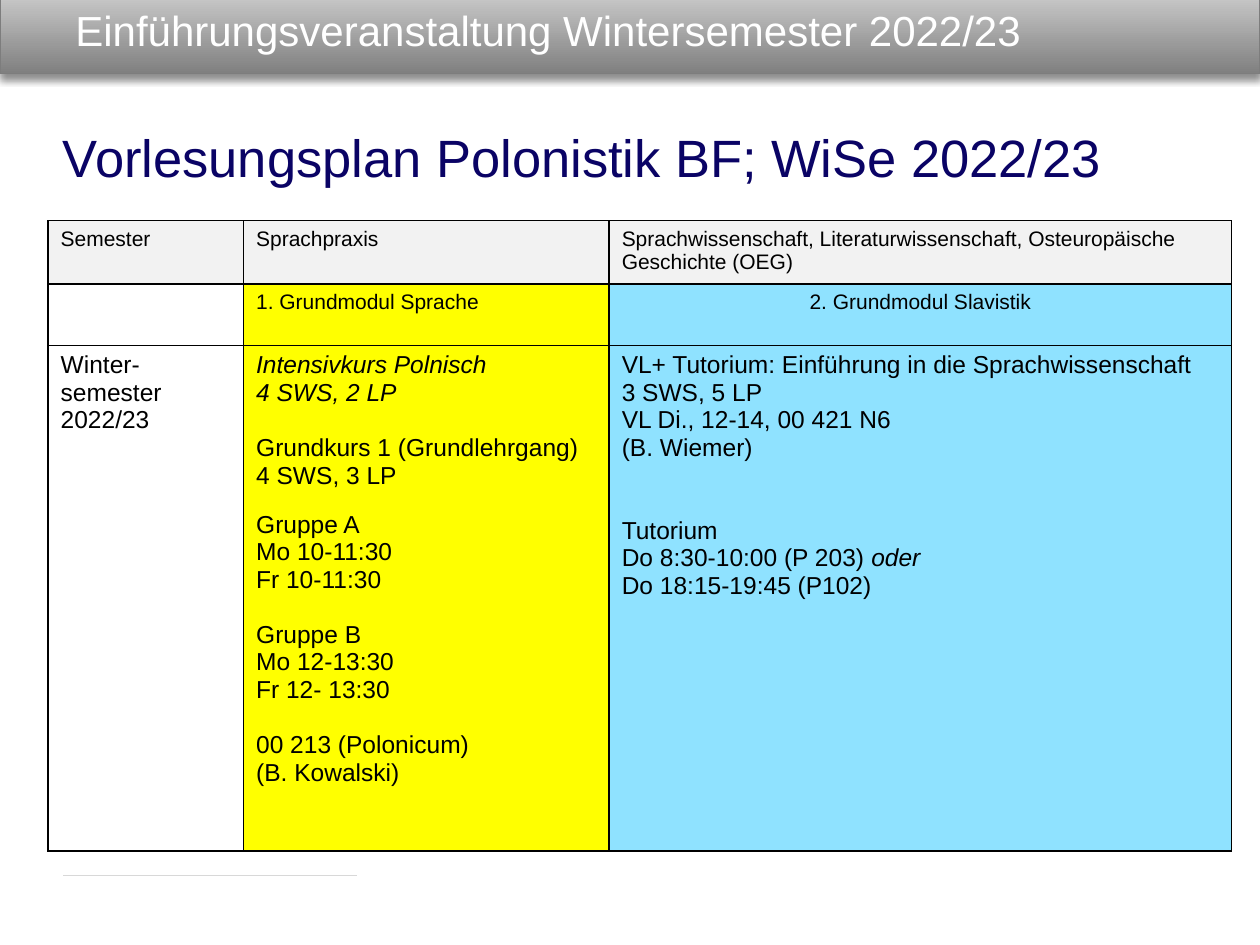
from pptx import Presentation
from pptx.dml.color import RGBColor
from pptx.enum.shapes import MSO_CONNECTOR, MSO_SHAPE
from pptx.enum.text import MSO_ANCHOR, PP_ALIGN
from pptx.oxml import parse_xml
from pptx.oxml.ns import nsdecls
from pptx.util import Cm, Pt

COLORS = {
    "black": "000000",
    "white": "FFFFFF",
    "navy": "0A0365",
    "header": "F2F2F2",
    "yellow": "FFFF00",
    "blue": "8FE2FF",
    "band_dark": "808080",
    "band_light": "CDCDCD",
    "band_line": "7D7D7D",
    "rule": "D8D8D8",
}
FULL_GAP = 15.75
SMALL_GAP = 12.4


class SlideBuilder:
    font = "Arial"

    def __init__(self, slide):
        self.slide = slide

    def color(self, name):
        return RGBColor.from_string(COLORS[name])

    def add_effects(self, shape, content=""):
        shape._element.spPr.append(
            parse_xml(f"<a:effectLst {nsdecls('a')}>{content}</a:effectLst>")
        )

    def band(self, left, top, width, height):
        shape = self.slide.shapes.add_shape(
            MSO_SHAPE.RECTANGLE, Cm(left), Cm(top), Cm(width), Cm(height)
        )
        shape.fill.gradient()
        shape.fill.gradient_angle = 90
        for stop, name in zip(shape.fill.gradient_stops, ("band_dark", "band_light")):
            stop.color.rgb = self.color(name)
        shape.line.color.rgb = self.color("band_line")
        shape.line.width = Pt(0.75)
        self.add_effects(
            shape,
            f'<a:outerShdw blurRad="{Pt(4)}" dist="{Pt(3)}" dir="5400000" rotWithShape="0">'
            f'<a:srgbClr val="{COLORS["black"]}"><a:alpha val="43000"/></a:srgbClr>'
            "</a:outerShdw>",
        )

    def rule(self, left, top, width):
        connector = self.slide.shapes.add_connector(
            MSO_CONNECTOR.STRAIGHT, Cm(left), Cm(top), Cm(left + width), Cm(top)
        )
        connector.line.color.rgb = self.color("rule")
        connector.line.width = Pt(0.75)
        self.add_effects(connector)

    def run(self, paragraph, text, size, color="black", italic=False):
        run = paragraph.add_run()
        run.text = text
        run.font.name = self.font
        run.font.size = Pt(size)
        run.font.italic = italic
        run.font.color.rgb = self.color(color)

    def text(self, left, top, width, height, text, size, color, anchor=MSO_ANCHOR.TOP):
        shape = self.slide.shapes.add_textbox(Cm(left), Cm(top), Cm(width), Cm(height))
        frame = shape.text_frame
        frame.word_wrap = True
        frame.vertical_anchor = anchor
        self.run(frame.paragraphs[0], text, size, color)

    def cell(self, cell, lines, size, fill=None, align=PP_ALIGN.LEFT):
        properties = cell._tc.get_or_add_tcPr()
        for side in ("lnL", "lnR", "lnT", "lnB"):
            properties.append(parse_xml(
                f'<a:{side} {nsdecls("a")} w="{Pt(1)}"><a:solidFill>'
                f'<a:srgbClr val="{COLORS["black"]}"/></a:solidFill></a:{side}>'
            ))
        if fill:
            cell.fill.solid()
            cell.fill.fore_color.rgb = self.color(fill)
        else:
            cell.fill.background()
        frame = cell.text_frame
        for index, (gap, *runs) in enumerate(lines):
            paragraph = frame.add_paragraph() if index else frame.paragraphs[0]
            paragraph.alignment = align
            if gap:
                paragraph.space_before = Pt(gap)
            for text, italic in runs:
                self.run(paragraph, text, size, italic=italic)

    def table(self, left, top, widths, heights, rows):
        table = self.slide.shapes.add_table(
            len(heights), len(widths), Cm(left), Cm(top), Cm(sum(widths)), Cm(sum(heights))
        ).table
        table.first_row = False
        table.horz_banding = False
        for column, width in zip(table.columns, widths):
            column.width = Cm(width)
        for row, height, contents in zip(table.rows, heights, rows):
            row.height = Cm(height)
            for cell, content in zip(row.cells, contents):
                self.cell(cell, *content)


def block(*texts, gap=0, italic=False):
    return [(0 if index else gap, (text, italic)) for index, text in enumerate(texts)]


def main():
    presentation = Presentation()
    presentation.slide_width = Cm(25.4)
    presentation.slide_height = Cm(19.05)
    builder = SlideBuilder(presentation.slides.add_slide(presentation.slide_layouts[6]))

    builder.band(0, -0.2, 25.4, 1.68)
    builder.rule(1.27, 17.65, 5.92)
    builder.text(1.27, 0, 23.55, 1.19, "Einführungsveranstaltung Wintersemester 2022/23",
                 24, "white", MSO_ANCHOR.MIDDLE)
    builder.text(1.02, 2.39, 22.48, 1.55, "Vorlesungsplan Polonistik BF; WiSe 2022/23",
                 30, "navy")

    language_courses = (
        block("Intensivkurs Polnisch", "4 SWS, 2 LP", italic=True)
        + block("Grundkurs 1 (Grundlehrgang)", "4 SWS, 3 LP", gap=FULL_GAP)
        + block("Gruppe A", "Mo 10-11:30", "Fr 10-11:30", gap=SMALL_GAP)
        + block("Gruppe B", "Mo 12-13:30", "Fr 12- 13:30", gap=FULL_GAP)
        + block("00 213 (Polonicum)", "(B. Kowalski)", gap=FULL_GAP)
    )
    lectures = (
        block("VL+ Tutorium: Einführung in die Sprachwissenschaft", "3 SWS, 5 LP",
              "VL Di., 12-14, 00 421 N6", "(B. Wiemer)")
        + block("Tutorium", gap=2 * FULL_GAP)
        + [(0, ("Do 8:30-10:00 (P 203) ", False), ("oder", True))]
        + block("Do 18:15-19:45 (P102)")
    )
    headings = (
        "Semester",
        "Sprachpraxis",
        "Sprachwissenschaft, Literaturwissenschaft, Osteuropäische Geschichte (OEG)",
    )
    rows = [
        [(block(heading), 12, "header") for heading in headings],
        [
            ([], 12),
            (block("1. Grundmodul Sprache"), 12, "yellow"),
            (block("2. Grundmodul Slavistik"), 12, "blue", PP_ALIGN.CENTER),
        ],
        [
            (block("Winter-semester 2022/23"), 14),
            (language_courses, 14, "yellow"),
            (lectures, 14, "blue"),
        ],
    ]
    builder.table(0.97, 4.45, (3.94, 7.37, 12.55), (1.27, 1.24, 10.2), rows)

    presentation.save("out.pptx")


if __name__ == "__main__":
    main()
